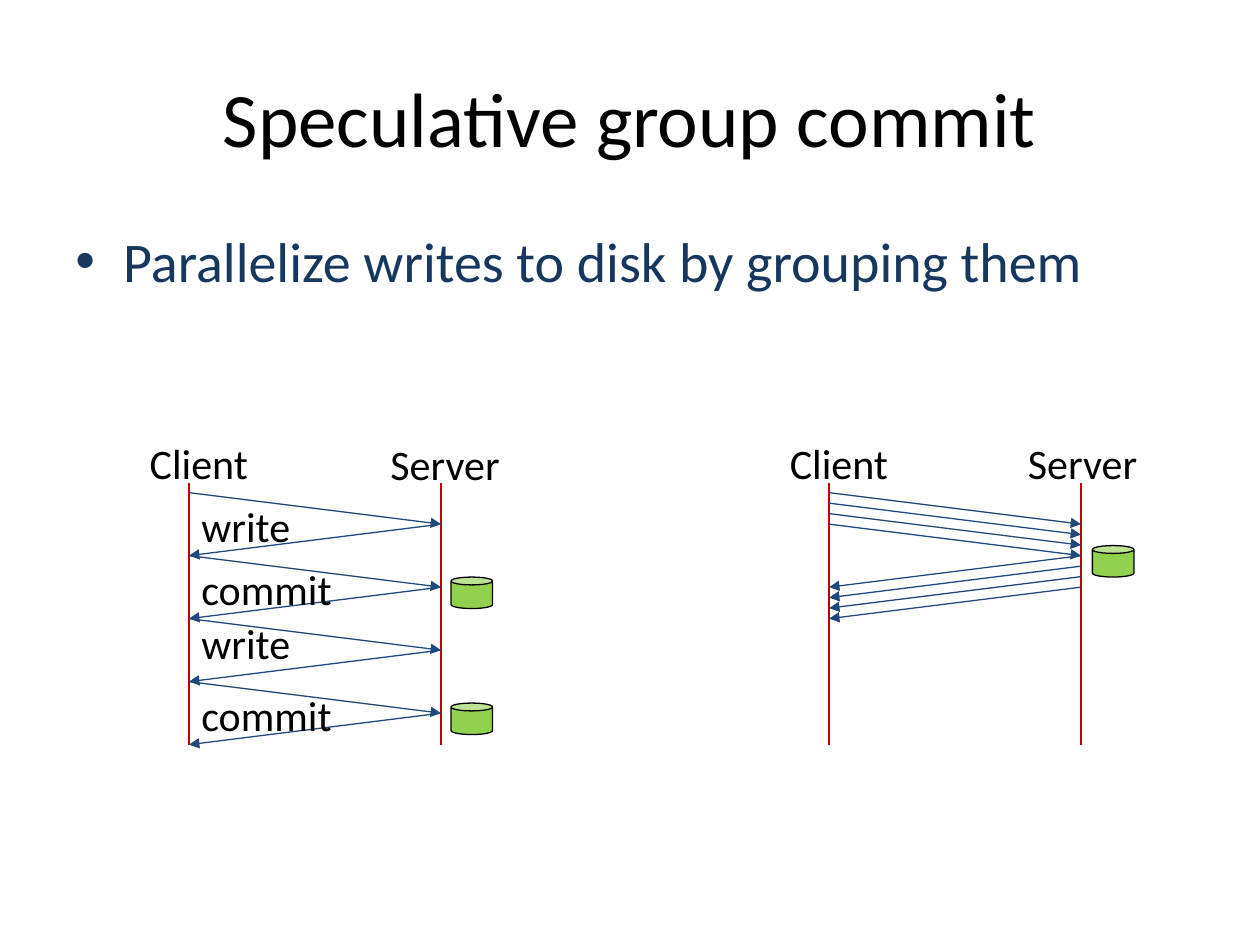
"""Build a slide comparing sequential writes with speculative group commit."""
from lxml.etree import SubElement
from pptx import Presentation
from pptx.dml.color import RGBColor
from pptx.enum.shapes import MSO_CONNECTOR as Link, MSO_SHAPE as Shape
from pptx.enum.text import MSO_ANCHOR as Anchor, PP_ALIGN as Align
from pptx.oxml.ns import qn
from pptx.util import Inches, Pt

BLACK = RGBColor(0x00, 0x00, 0x00)
NAVY = RGBColor(0x17, 0x37, 0x5E)
BLUE = RGBColor(0x1F, 0x49, 0x7D)
RED = RGBColor(0xC0, 0x00, 0x00)
GREEN = RGBColor(0x92, 0xD0, 0x50)

TITLE = "Speculative group commit"
POINT = "Parallelize writes to disk by grouping them"
LABELS = [
    ("Client", 1.09, 3.42, 1.06), ("Server", 3.0, 3.43, 1.19),
    ("Client", 6.17, 3.42, 1.06), ("Server", 8.06, 3.42, 1.19),
    ("write", 1.5, 3.92, 0.91), ("commit", 1.5, 4.42, 1.27),
    ("write", 1.5, 4.85, 0.91), ("commit", 1.5, 5.42, 1.27),
]
DISKS = [(3.58, 4.58), (3.58, 5.58), (8.67, 4.33)]
LEFT, RIGHT = (1.5, 3.5), (6.58, 8.58)
TOP, START, END = 3.83, 3.91, 5.91
DROP = 0.25
TRIPS = 4
GAP = DROP / 3


def style(run, size, color):
    run.font.name = "Calibri"
    run.font.size = Pt(size)
    run.font.color.rgb = color


def add_line(slide, x1, y1, x2, y2, color, arrow=False):
    line = slide.shapes.add_connector(
        Link.STRAIGHT, Inches(x1), Inches(y1), Inches(x2), Inches(y2))
    line.line.color.rgb = color
    line.line.width = Pt(0.75)
    if arrow:
        SubElement(line.line._get_or_add_ln(), qn("a:tailEnd"), type="triangle")
    SubElement(line._element.spPr, qn("a:effectLst"))


def add_text(slide, text, x, y, wide, high, size, color, wrap=False):
    box = slide.shapes.add_textbox(
        Inches(x), Inches(y), Inches(wide), Inches(high))
    frame = box.text_frame
    frame.word_wrap = wrap
    frame.text = text
    para = frame.paragraphs[0]
    style(para.runs[0], size, color)
    return para


def add_disk(slide, x, y):
    disk = slide.shapes.add_shape(
        Shape.CAN, Inches(x), Inches(y), Inches(0.33), Inches(0.25))
    disk.shadow.inherit = False
    disk.fill.solid()
    disk.fill.fore_color.rgb = GREEN
    disk.line.color.rgb = BLACK
    disk.line.width = Pt(0.75)


def add_head(slide):
    title = slide.shapes.title
    title.left, title.top = Inches(0.5), Inches(0.3)
    title.width, title.height = Inches(9), Inches(1.25)
    frame = title.text_frame
    frame.text = TITLE
    frame.vertical_anchor = Anchor.MIDDLE
    para = frame.paragraphs[0]
    para.alignment = Align.CENTER
    style(para.runs[0], 44, BLACK)

    para = add_text(slide, POINT, 0.5, 1.75, 9, 5.25, 32, NAVY, True)
    para.space_before = Pt(6.4)
    props = para._p.get_or_add_pPr()
    props.set("marL", str(Inches(0.38)))
    props.set("indent", str(Inches(-0.38)))
    SubElement(props, qn("a:buFont"), typeface="Arial")
    SubElement(props, qn("a:buChar"), char="•")


def main():
    deck = Presentation()
    deck.slide_width, deck.slide_height = Inches(10), Inches(7.5)
    slide = deck.slides.add_slide(deck.slide_layouts[5])
    add_head(slide)

    for x in LEFT + RIGHT:
        add_line(slide, x, TOP, x, END, RED)

    hops = []
    for i in range(TRIPS):
        y = START + 2 * i * DROP
        hops += [(LEFT, y), (LEFT[::-1], y + DROP)]
        y = START + i * GAP
        hops += [(RIGHT, y), (RIGHT[::-1], y + 2 * DROP)]
    for (x1, x2), y in hops:
        add_line(slide, x1, y, x2, y + DROP, BLUE, True)

    for x, y in DISKS:
        add_disk(slide, x, y)
    for text, x, y, wide in LABELS:
        add_text(slide, text, x, y, wide, 0.51, 24, BLACK)
    deck.save("out.pptx")


if __name__ == "__main__":
    main()
